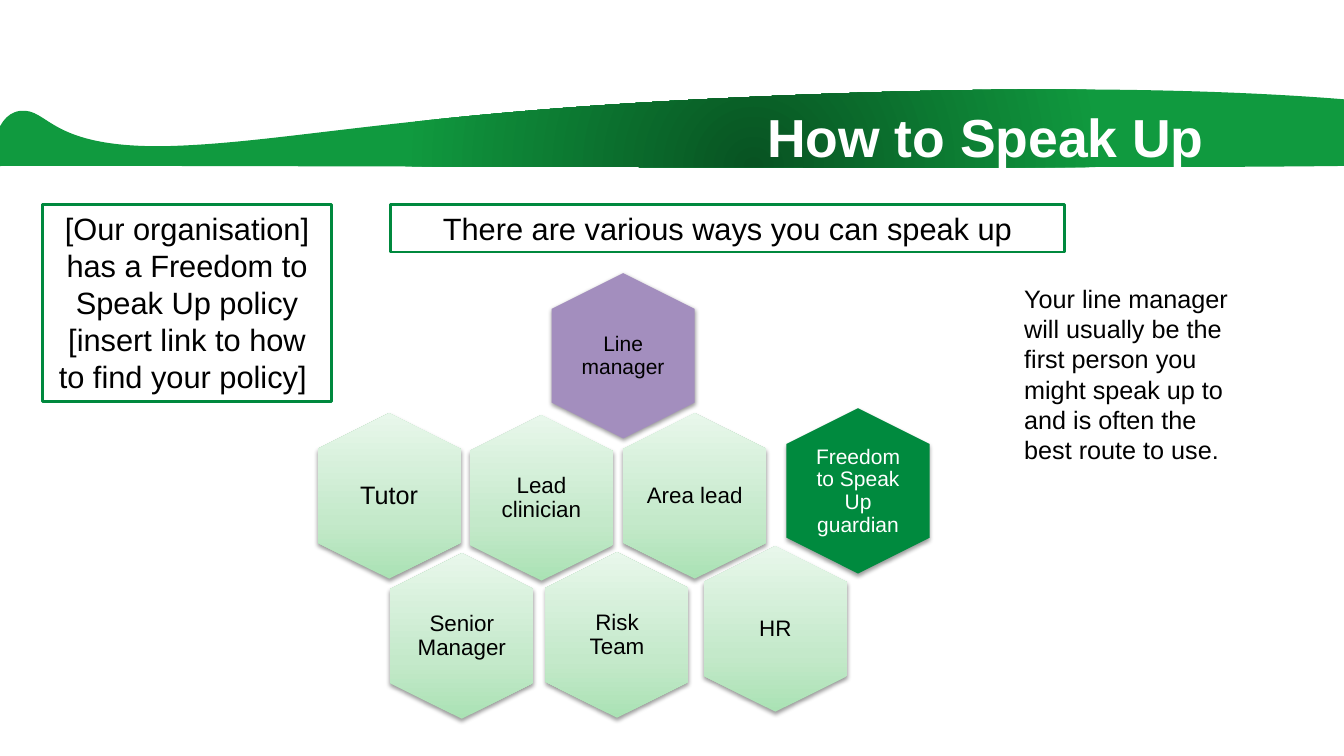
from lxml.etree import SubElement
from pptx import Presentation
from pptx.dml.color import RGBColor
from pptx.enum.shapes import MSO_SHAPE
from pptx.enum.text import MSO_ANCHOR, MSO_AUTO_SIZE, PP_ALIGN
from pptx.oxml import parse_xml
from pptx.oxml.ns import nsdecls, qn
from pptx.util import Inches, Pt

FONT = "Arial"
COLORS = {
    "white": "FFFFFF", "black": "000000", "border": "00893E",
    "purple": "A38EBE", "green": "008A3E",
    "wave_glow": "7DF2A5", "wave_dark": "085322", "wave_green": "109A3F",
    "mint_dark": "AAE2B4", "mint": "C4E9CA", "mint_light": "E8F7EB",
}
WAVE_START = (13.71, 1.02)
WAVE_CURVES = [
    ((12.63, 0.91), (10.58, 0.81), (7.28, 0.97)),
    ((3.99, 1.12), (2.83, 1.42), (1.65, 1.45)),
    ((0.47, 1.47), (0.49, 1.07), (0.2, 1.1)),
    ((-0.1, 1.14), (-0.07, 1.66), (-0.1, 1.65)),
    ((-0.16, 1.63), (11.35, 1.69), (13.72, 1.64)),
    ((16.09, 1.59), (14.78, 1.13), WAVE_START),
]
HEXAGON_SIZE = (1.64, 1.42)
LABEL_OFFSET = (0.33, 0.15)
LABEL_SIZE = (0.98, 1.13)
# label, left, top, fill, text colour, text size, inset
HEXAGONS = [
    ("Line manager", 5.36, 2.82, "purple", "black", 15, 0.06),
    ("Tutor", 3.04, 4.21, "mint", "black", 18, 0),
    ("Risk Team", 5.3, 5.59, "mint", "black", 16, 0.07),
    ("Area lead", 6.07, 4.21, "mint", "black", 16, 0),
    ("Lead clinician", 4.55, 4.23, "mint", "black", 16, 0.07),
    ("Senior Manager", 3.76, 5.6, "mint", "black", 16, 0),
    ("Freedom to Speak Up guardian", 7.69, 4.16, "green", "white", 15, 0.06),
    ("HR", 6.87, 5.53, "mint", "black", 16, 0),
]


def rgb(name):
    return RGBColor.from_string(COLORS[name])


def set_gradient(shape, stops, direction):
    """Fill with (percent, colour) stops along a direction given as XML."""
    stop_xml = "".join(
        f'<a:gs pos="{percent * 1000}"><a:srgbClr val="{COLORS[name]}"/></a:gs>'
        for percent, name in stops)
    gradient = parse_xml(
        f'<a:gradFill {nsdecls("a")} rotWithShape="0">'
        f'<a:gsLst>{stop_xml}</a:gsLst>{direction}</a:gradFill>')
    shape.fill.background()
    properties = shape._element.spPr
    properties.replace(properties.find(qn("a:noFill")), gradient)


def set_shadow(shape):
    shape.shadow.inherit = False
    effects = shape._element.spPr.find(qn("a:effectLst"))
    shadow = SubElement(effects, qn("a:outerShdw"), blurRad=str(Pt(3.1)),
                        dist=str(Pt(1.6)), dir="5400000", rotWithShape="0")
    color = SubElement(shadow, qn("a:srgbClr"), val=COLORS["black"])
    SubElement(color, qn("a:alpha"), val="38000")


def write(shape, text, size, color="black", align=PP_ALIGN.LEFT,
          anchor=MSO_ANCHOR.TOP, insets=(0.1, 0.05)):
    frame = shape.text_frame
    frame.word_wrap = True
    frame.vertical_anchor = anchor
    frame.margin_left = frame.margin_right = Inches(insets[0])
    frame.margin_top = frame.margin_bottom = Inches(insets[1])
    frame.text = text
    para = frame.paragraphs[0]
    para.alignment = align
    span = para.runs[0]
    span.font.name = FONT
    span.font.size = Pt(size)
    span.font.color.rgb = rgb(color)
    return para


def bend_outline(shape, box, start, curves):
    """Give a freeform the box and a closed outline of cubic curves."""
    left, top, width, height = box
    shape.left, shape.top, shape.width, shape.height = map(Inches, box)
    outline = next(shape._element.iter(qn("a:path")))
    outline.clear()
    outline.set("w", str(Inches(width)))
    outline.set("h", str(Inches(height)))
    for tag, points in [("a:moveTo", [start]),
                        *(("a:cubicBezTo", curve) for curve in curves)]:
        segment = SubElement(outline, qn(tag))
        for x, y in points:
            SubElement(segment, qn("a:pt"), x=str(Inches(x - left)),
                       y=str(Inches(y - top)))
    SubElement(outline, qn("a:close"))


def add_wave(page, box):
    builder = page.shapes.build_freeform(*map(Inches, WAVE_START))
    builder.add_line_segments(
        [tuple(map(Inches, curve[-1])) for curve in WAVE_CURVES])
    wave = builder.convert_to_shape()
    bend_outline(wave, box, WAVE_START, WAVE_CURVES)
    wave.shadow.inherit = False
    wave.line.fill.background()
    set_gradient(
        wave, [(0, "wave_glow"), (0, "wave_dark"), (46, "wave_green")],
        '<a:path path="circle"><a:fillToRect l="50000" t="130000" '
        'r="50000" b="-30000"/></a:path>')


def add_title(page, box, text):
    title = page.shapes.add_textbox(*map(Inches, box))
    para = write(title, text, 38.2, "white", anchor=MSO_ANCHOR.MIDDLE,
                 insets=(0.39, 0.16))
    para.runs[0].font.bold = True


def add_hexagon(page, label, left, top, fill, color, size, inset):
    """Add a hexagon standing on its point, with an upright label."""
    hexagon = page.shapes.add_shape(
        MSO_SHAPE.HEXAGON, *map(Inches, (left, top, *HEXAGON_SIZE)))
    hexagon.rotation = 90
    hexagon.adjustments[0] = 0.25
    hexagon.adjustments[1] = 1.1547
    hexagon.line.fill.background()
    if fill == "mint":
        set_gradient(
            hexagon, [(0, "mint_dark"), (35, "mint"), (100, "mint_light")],
            '<a:lin ang="16200000" scaled="0"/>')
    else:
        hexagon.fill.solid()
        hexagon.fill.fore_color.rgb = rgb(fill)
    set_shadow(hexagon)

    label_box = (left + LABEL_OFFSET[0], top + LABEL_OFFSET[1], *LABEL_SIZE)
    caption = page.shapes.add_textbox(*map(Inches, label_box))
    para = write(caption, label, size, color, PP_ALIGN.CENTER,
                 MSO_ANCHOR.MIDDLE, (inset, inset))
    para.line_spacing = 0.9


def add_framed_note(page, box, text):
    note = page.shapes.add_shape(MSO_SHAPE.RECTANGLE, *map(Inches, box))
    note.shadow.inherit = False
    note.fill.solid()
    note.fill.fore_color.rgb = rgb("white")
    note.line.color.rgb = rgb("border")
    note.line.width = Pt(2)
    write(note, text, 22, align=PP_ALIGN.CENTER)
    note.text_frame.auto_size = MSO_AUTO_SIZE.SHAPE_TO_FIT_TEXT


def add_side_note(page, box, text):
    note = page.shapes.add_textbox(*map(Inches, box))
    write(note, text, 18)
    note.text_frame.auto_size = MSO_AUTO_SIZE.SHAPE_TO_FIT_TEXT


def main():
    deck = Presentation()
    deck.slide_width = Inches(13.33)
    deck.slide_height = Inches(7.5)
    page = deck.slides.add_slide(deck.slide_layouts[6])
    add_wave(page, (-0.1, 0.88, 15.15, 0.78))
    add_title(page, (7.22, 0.89, 6.36, 0.93), "How to Speak Up")
    for hexagon in HEXAGONS:
        add_hexagon(page, *hexagon)
    add_framed_note(
        page, (0.42, 2.03, 2.87, 1.95),
        "[Our organisation] has a Freedom to Speak Up policy "
        "[insert link to how to find your policy] ")
    add_framed_note(page, (3.87, 2.03, 6.69, 0.47),
                    "There are various ways you can speak up")
    add_side_note(
        page, (10.06, 2.76, 2.3, 1.92),
        "Your line manager will usually be the first person you might "
        "speak up to and is often the best route to use.")
    deck.save("out.pptx")


if __name__ == "__main__":
    main()
